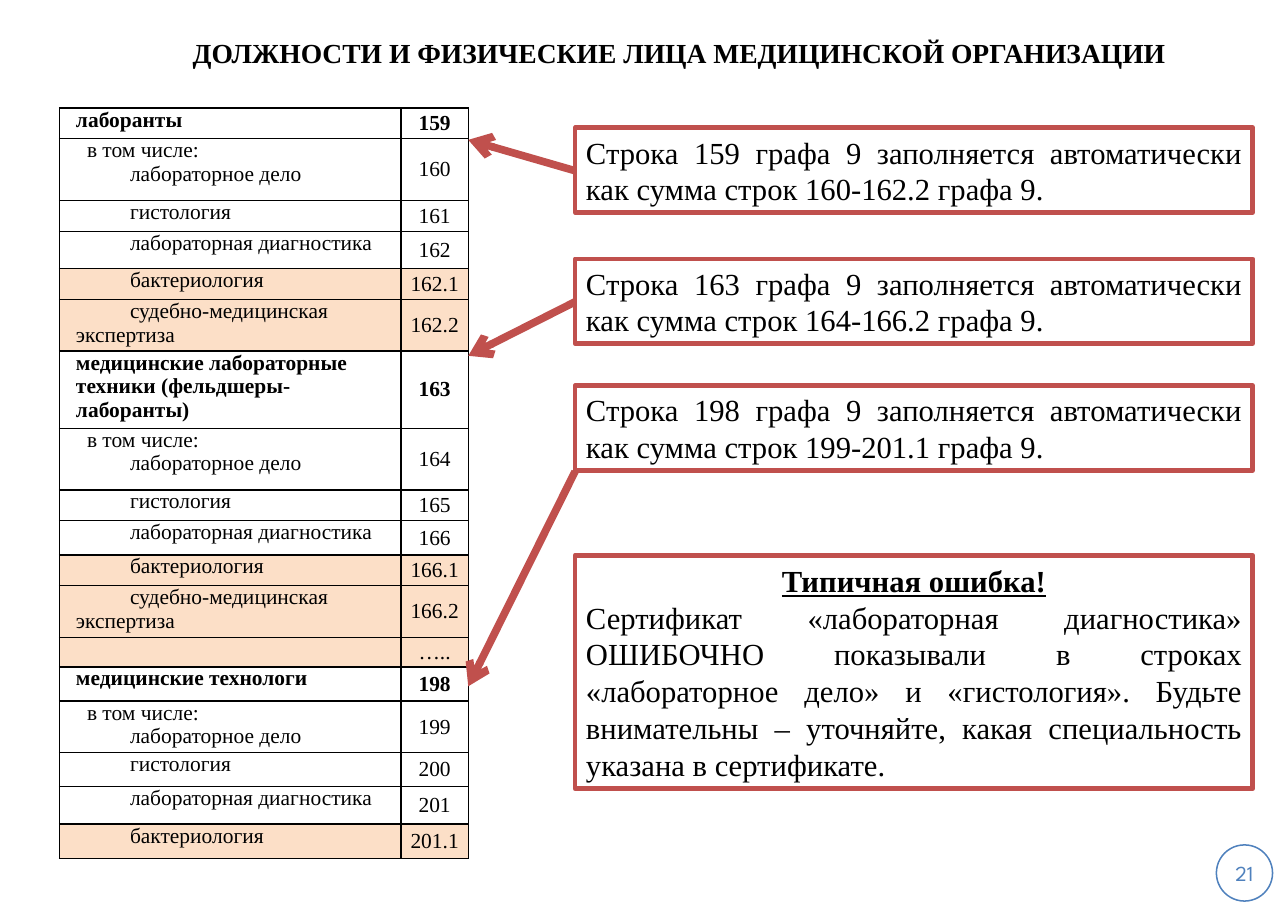
"""Build the slide on laboratory staff positions and how their rows add up."""
import pptx
import pptx.util
import pptx.dml.color
import pptx.enum.shapes
import pptx.enum.text
import pptx.oxml

PX = 9144
BLACK = pptx.dml.color.RGBColor(0x00, 0x00, 0x00)
WHITE = pptx.dml.color.RGBColor(0xFF, 0xFF, 0xFF)
PEACH = pptx.dml.color.RGBColor(0xFC, 0xDF, 0xC7)
RED = pptx.dml.color.RGBColor(0xC0, 0x50, 0x4D)
BLUE = pptx.dml.color.RGBColor(0x4F, 0x81, 0xBD)
SERIF = "Times New Roman"
DRAWING = 'xmlns:a="http://schemas.openxmlformats.org/drawingml/2006/main"'
ALIGN = pptx.enum.text.PP_ALIGN
MIDDLE = pptx.enum.text.MSO_ANCHOR.MIDDLE
SHAPES = pptx.enum.shapes.MSO_SHAPE


def style(paragraph, size, align, bold=False, name=SERIF, color=BLACK):
    paragraph.alignment = align
    paragraph.font.size = pptx.util.Pt(size)
    paragraph.font.name = name
    paragraph.font.bold = bold
    paragraph.font.color.rgb = color


def add_outlined(kind, left, top, width, height, line_color, line_width):
    shape = slide.shapes.add_shape(kind, left * PX, top * PX, width * PX, height * PX)
    shape.shadow.inherit = False
    shape.fill.solid()
    shape.fill.fore_color.rgb = WHITE
    shape.line.color.rgb = line_color
    shape.line.width = pptx.util.Pt(line_width)
    shape.text_frame.word_wrap = True
    shape.text_frame.vertical_anchor = MIDDLE
    return shape


presentation = pptx.Presentation()
presentation.slide_width = 1169 * PX
presentation.slide_height = 827 * PX
slide = presentation.slides.add_slide(presentation.slide_layouts[6])

badge = add_outlined(SHAPES.OVAL, 1104, 767, 51, 51, BLUE, 1)
frame = badge.text_frame
frame.margin_left = frame.margin_right = frame.margin_top = frame.margin_bottom = 0
frame.text = "21"
style(frame.paragraphs[0], 14, ALIGN.CENTER, name="League Spartan", color=BLUE)

title = slide.shapes.add_textbox(73 * PX, 0, 1097 * PX, 95 * PX)
frame = title.text_frame
frame.word_wrap = True
frame.vertical_anchor = MIDDLE
frame.margin_left = 0
frame.text = "ДОЛЖНОСТИ И ФИЗИЧЕСКИЕ ЛИЦА МЕДИЦИНСКОЙ ОРГАНИЗАЦИИ"
style(frame.paragraphs[0], 18, ALIGN.CENTER, bold=True)

INCLUDING = "в том числе:"
WORK = INCLUDING + "\nлабораторное дело"
HISTOLOGY = "гистология"
DIAGNOSTICS = "лабораторная диагностика"
BACTERIOLOGY = "бактериология"
FORENSICS = "судебно-медицинская экспертиза"
TOTALS = ("159", "163", "198")
rows = [
    ("лаборанты", "159", 28),
    (WORK, "160", 56),
    (HISTOLOGY, "161", 28),
    (DIAGNOSTICS, "162", 34),
    (BACTERIOLOGY, "162.1", 28),
    (FORENSICS, "162.2", 42),
    ("медицинские лабораторные техники (фельдшеры-лаборанты)", "163", 64),
    (WORK, "164", 56),
    (HISTOLOGY, "165", 28),
    (DIAGNOSTICS, "166", 31),
    (BACTERIOLOGY, "166.1", 28),
    (FORENSICS, "166.2", 43),
    ("", "…..", 27),
    ("медицинские технологи", "198", 31),
    (WORK, "199", 43),
    (HISTOLOGY, "200", 31),
    (DIAGNOSTICS, "201", 34),
    (BACTERIOLOGY, "201.1", 31),
]
table_height = sum(height for _, _, height in rows)
table = slide.shapes.add_table(len(rows), 2, 54 * PX, 98 * PX, 371 * PX, table_height * PX).table
table.first_row = table.horz_banding = False
table.columns[0].width = 310 * PX
table.columns[1].width = 61 * PX
for index, (position, number, height) in enumerate(rows):
    table.rows[index].height = height * PX
    for column, text in enumerate((position, number)):
        cell = table.cell(index, column)
        cell.margin_left = cell.margin_right = 7 * PX
        cell.margin_top = cell.margin_bottom = 0
        cell.text = text
        if "." in number:
            cell.fill.solid()
            cell.fill.fore_color.rgb = PEACH
        else:
            cell.fill.background()
        for order, side in enumerate("LRTB"):
            border = pptx.oxml.parse_xml(
                f'<a:ln{side} {DRAWING} w="12700"><a:solidFill>'
                f'<a:srgbClr val="{BLACK}"/></a:solidFill></a:ln{side}>')
            cell._tc.get_or_add_tcPr().insert(order, border)
        if column == 1:
            cell.vertical_anchor = MIDDLE
        for paragraph in cell.text_frame.paragraphs:
            if column == 0:
                indent = 0 if number in TOTALS else 10 if paragraph.text == INCLUDING else 49
                properties = paragraph._p.get_or_add_pPr()
                properties.set("marL", str(8 * PX))
                properties.set("indent", str(indent * PX))
            style(paragraph, 14, ALIGN.CENTER if column else ALIGN.LEFT, bold=number in TOTALS)

notes = [
    (116, 77, ["Строка 159 графа 9 заполняется автоматически как сумма строк 160-162.2 графа 9."]),
    (235, 77, ["Строка 163 графа 9 заполняется автоматически как сумма строк 164-166.2 графа 9."]),
    (350, 77, ["Строка 198 графа 9 заполняется автоматически как сумма строк 199-201.1 графа 9."]),
    (504, 212, ["Типичная ошибка!",
                "Сертификат «лабораторная диагностика» ОШИБОЧНО показывали в строках "
                "«лабораторное дело» и «гистология». Будьте внимательны – уточняйте, "
                "какая специальность указана в сертификате."]),
]
for top, height, texts in notes:
    note = add_outlined(SHAPES.RECTANGLE, 522, top, 615, height, RED, 3)
    note.text_frame.text = "\n".join(texts)
    for paragraph in note.text_frame.paragraphs:
        style(paragraph, 20, ALIGN.JUSTIFY)
    if len(texts) > 1:
        heading = note.text_frame.paragraphs[0]
        style(heading, 20, ALIGN.CENTER, bold=True)
        heading.font.underline = True

for start, end in ((155, 127), (274, 323), (428, 623)):
    arrow = slide.shapes.add_connector(
        pptx.enum.shapes.MSO_CONNECTOR.STRAIGHT, 522 * PX, start * PX, 425 * PX, end * PX)
    arrow.line.color.rgb = RED
    arrow.line.width = pptx.util.Pt(5)
    arrow.line._get_or_add_ln().append(pptx.oxml.parse_xml(f'<a:tailEnd {DRAWING} type="arrow"/>'))
    arrow._element.spPr.append(pptx.oxml.parse_xml(f"<a:effectLst {DRAWING}/>"))

presentation.save("out.pptx")
